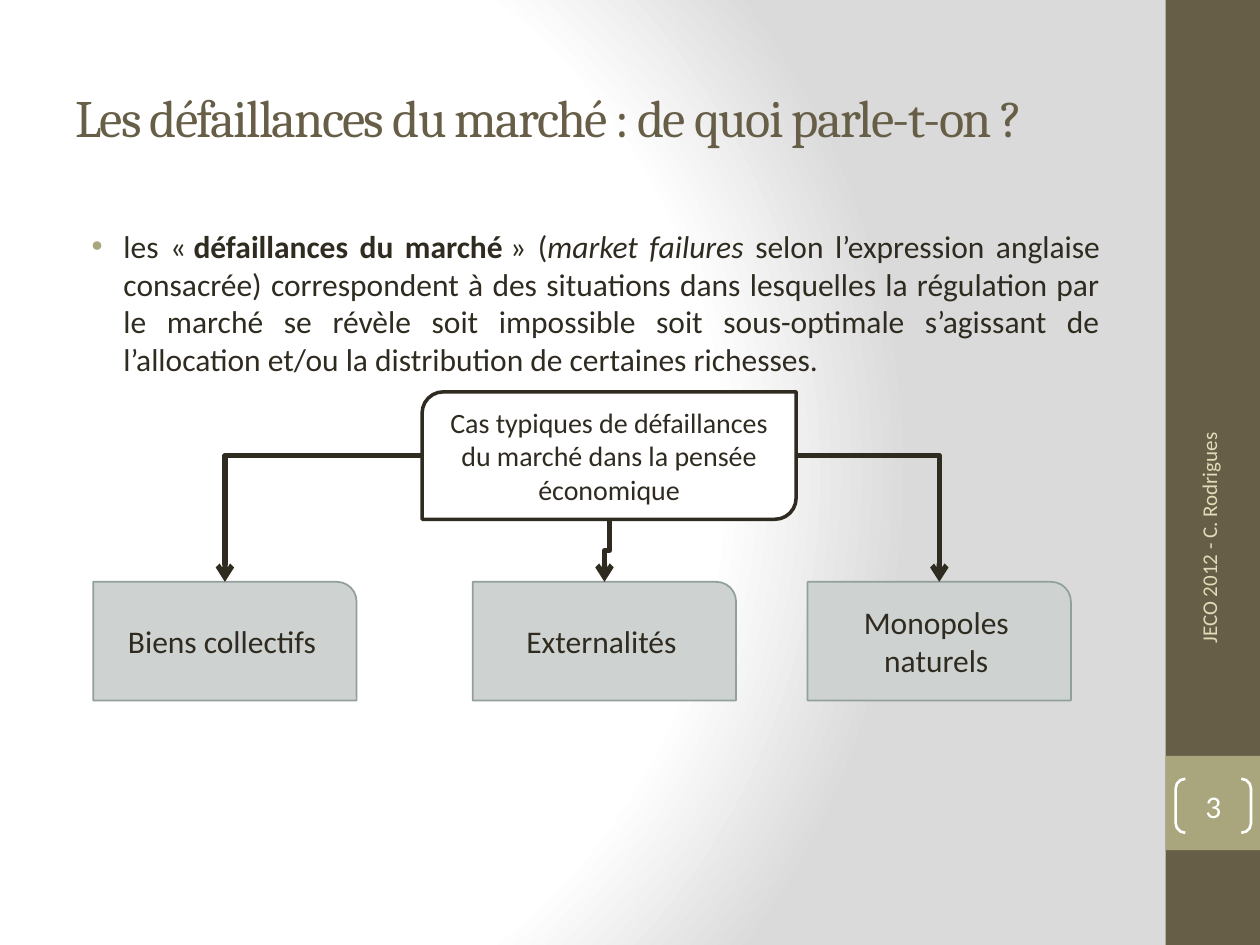
from lxml import etree
from pptx import Presentation
from pptx.dml.color import RGBColor
from pptx.enum.shapes import MSO_CONNECTOR as Link, MSO_SHAPE as Shape
from pptx.enum.text import MSO_ANCHOR as Anchor, PP_ALIGN as Align
from pptx.oxml import parse_xml
from pptx.oxml.ns import nsdecls, qn
from pptx.util import Cm, Pt

INK, BROWN, OLIVE, CREAM, WHITE = "2F2B20", "675E47", "A9A57C", "DFDCB7", "FFFFFF"
CASE_FILL, CASE_LINE = "CED3D1", "91A09A"
BACKGROUND_STOPS = [(0, WHITE), (75, WHITE), (100, "DADADA")]
TITLE = "Les défaillances du marché : de quoi parle-t-on ?"
DEFINITION = [
    ("les «\u00a0", ""),
    ("défaillances du marché", "bold"),
    ("\u00a0» (", ""),
    ("market failures", "italic"),
    (" selon l’expression anglaise consacrée) correspondent à des situations dans "
     "lesquelles la régulation par le marché se révèle soit impossible soit "
     "sous-optimale s’agissant de l’allocation et/ou la distribution de certaines "
     "richesses.", ""),
]
FOOTER, NUMBER = "JECO 2012 - C. Rodrigues", "3"
ROOT = "Cas typiques de défaillances du marché dans la pensée économique"
ROOT_BOX = (8.51, 7.9, 7.54, 2.57)
CASES = [("Biens collectifs", 1.88), ("Externalités", 9.53), ("Monopoles naturels", 16.28)]
CASE_TOP, CASE_WIDTH, CASE_HEIGHT = 11.73, 5.31, 2.39


def color(value):
    """Turn a hex string into a colour."""
    return RGBColor.from_string(value)


def style_span(span, size, tint, font="Calibri"):
    """Set the font of one run."""
    span.font.size, span.font.name = Pt(size), font
    span.font.color.rgb = color(tint)


def write(box, text, size, tint, align=Align.CENTER, font="Calibri"):
    """Put one vertically centred paragraph into a shape and return its run."""
    frame = box.text_frame
    frame.word_wrap, frame.vertical_anchor = True, Anchor.MIDDLE
    frame.text = text
    para = frame.paragraphs[0]
    para.alignment = align
    style_span(para.runs[0], size, tint, font)
    return para.runs[0]


def add_box(page, kind, place, fill=None, line=None, width=1):
    """Add a preset shape without shadow."""
    box = page.shapes.add_shape(kind, *map(Cm, place))
    box.shadow.inherit = False
    if fill:
        box.fill.solid()
        box.fill.fore_color.rgb = color(fill)
    else:
        box.fill.background()
    if line:
        box.line.color.rgb = color(line)
        box.line.width = Pt(width)
    else:
        box.line.fill.background()
    return box


def add_text(page, place):
    """Add an empty text box."""
    return page.shapes.add_textbox(*map(Cm, place))


def add_arrow(page, start, end, preset):
    """Add an elbow arrow between two points."""
    arrow = page.shapes.add_connector(Link.ELBOW, *map(Cm, start + end))
    arrow.line.color.rgb = color(INK)
    arrow.line.width = Pt(3)
    properties = arrow.element.spPr
    properties.find(qn("a:prstGeom")).set("prst", preset)
    etree.SubElement(arrow.line._get_or_add_ln(), qn("a:tailEnd"), type="arrow")
    etree.SubElement(properties, qn("a:effectLst"))
    return arrow


def add_drop_arrow(page, start, end):
    """Add an arrow that leaves downwards, shifts sideways and goes on down."""
    middle_x, middle_y = (start[0] + end[0]) / 2, (start[1] + end[1]) / 2
    length, shift = end[1] - start[1], start[0] - end[0]
    corner = (middle_x - length / 2, middle_y - shift / 2)
    opposite = (middle_x + length / 2, middle_y + shift / 2)
    arrow = add_arrow(page, corner, opposite, "bentConnector3")
    arrow.element.spPr.find(qn("a:xfrm")).set("rot", str(90 * 60000))


def paint_background(page):
    """Fill the page with a circular gradient."""
    stops = "".join(
        f'<a:gs pos="{place * 1000}"><a:srgbClr val="{tint}"/></a:gs>'
        for place, tint in BACKGROUND_STOPS)
    page.element.cSld.insert(0, parse_xml(
        f'<p:bg {nsdecls("p", "a")}><p:bgPr><a:gradFill rotWithShape="1">'
        f'<a:gsLst>{stops}</a:gsLst><a:path path="circle">'
        '<a:fillToRect l="20000" t="50000" r="100000" b="50000"/></a:path>'
        '</a:gradFill><a:effectLst/></p:bgPr></p:bg>'))


def add_definition(page):
    """Add the justified bullet paragraph."""
    frame = add_text(page, (1.27, 4.45, 21.16, 3.61)).text_frame
    frame.word_wrap = True
    para = frame.paragraphs[0]
    para.alignment, para.space_before = Align.JUSTIFY, Pt(3.6)
    for text, emphasis in DEFINITION:
        span = para.add_run()
        span.text = text
        style_span(span, 18, INK)
        span.font.bold, span.font.italic = emphasis == "bold", emphasis == "italic"
    settings = para._p.get_or_add_pPr()
    settings.set("marL", str(Cm(0.97)))
    settings.set("indent", str(-Cm(0.64)))
    tint = etree.SubElement(settings, qn("a:buClr"))
    etree.SubElement(tint, qn("a:srgbClr"), val=OLIVE)
    etree.SubElement(settings, qn("a:buFont"), typeface="Arial")
    etree.SubElement(settings, qn("a:buChar"), char="•")


def add_sidebar(page):
    """Add the side band with footer and page number."""
    add_box(page, Shape.RECTANGLE, (23.5, 0, 1.9, 19.05), BROWN)
    add_box(page, Shape.RECTANGLE, (23.5, 15.24, 1.9, 1.9), OLIVE)
    footer = add_text(page, (21.08, 11.25, 6.58, 1.02))
    footer.rotation = 270
    write(footer, FOOTER, 12, CREAM, Align.RIGHT)
    bracket = add_box(page, Shape.DOUBLE_BRACKET, (23.7, 15.7, 1.52, 1.09), None, WHITE, 1.5)
    bracket.adjustments[0] = 0.18
    frame = bracket.text_frame
    frame.margin_left = frame.margin_right = frame.margin_top = frame.margin_bottom = 0
    write(bracket, NUMBER, 18, WHITE)


def add_diagram(page):
    """Add the root box, the three cases and the arrows between them."""
    left, top, width, height = ROOT_BOX
    root = add_box(page, Shape.ROUND_2_DIAG_RECTANGLE, ROOT_BOX, WHITE, INK, 2)
    write(root, ROOT, 16, INK)
    heads = []
    for name, case_left in CASES:
        place = (case_left, CASE_TOP, CASE_WIDTH, CASE_HEIGHT)
        case = add_box(page, Shape.ROUND_1_RECTANGLE, place, CASE_FILL, CASE_LINE)
        write(case, name, 18, INK)
        heads.append((case_left + CASE_WIDTH / 2, CASE_TOP))
    middle = top + height / 2
    add_arrow(page, (left, middle), heads[0], "bentConnector2")
    add_drop_arrow(page, (left + width / 2, top + height), heads[1])
    add_arrow(page, (left + width, middle), heads[2], "bentConnector2")


def main():
    """Build the slide and save it."""
    deck = Presentation()
    deck.slide_width, deck.slide_height = Cm(25.4), Cm(19.05)
    page = deck.slides.add_slide(deck.slide_layouts[6])
    paint_background(page)
    add_sidebar(page)
    title = write(add_text(page, (1.27, 0.76, 21.16, 3.18)), TITLE, 30, BROWN, Align.LEFT, "Cambria")
    title.font._element.set("spc", "-100")
    add_definition(page)
    add_diagram(page)
    deck.save("out.pptx")


if __name__ == "__main__":
    main()
